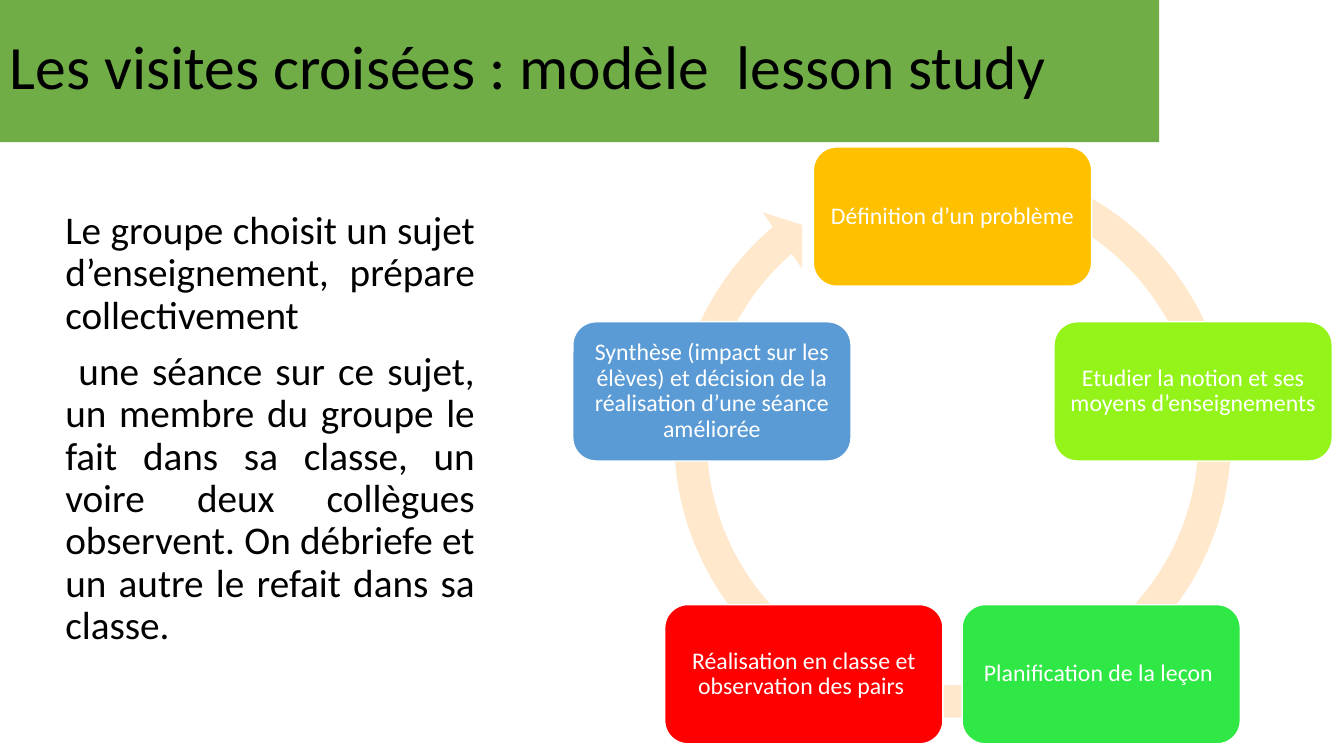
from math import cos, pi, sin

from pptx import Presentation
from pptx.dml.color import RGBColor
from pptx.enum.shapes import MSO_SHAPE
from pptx.enum.text import MSO_ANCHOR, PP_ALIGN
from pptx.util import Pt

TITLE = "Les visites croisées : modèle  lesson study"
BODY = [
    "Le groupe choisit un sujet d’enseignement, prépare collectivement",
    " une séance sur ce sujet, un membre du groupe le fait dans sa classe, "
    "un voire deux collègues observent. On débriefe et un autre le refait "
    "dans sa classe.",
]
STEPS = [
    ("Définition d’un problème", "FFC000"),
    ("Etudier la notion et ses moyens d’enseignements", "94F319"),
    ("Planification de la leçon ", "30E845"),
    ("Réalisation en classe et observation des pairs ", "FF0000"),
    ("Synthèse (impact sur les élèves) et décision de la réalisation "
     "d’une séance améliorée", "5B9BD5"),
]

CENTER_X, CENTER_Y, RADIUS = 680.4, 335.4, 180.7
STEP_W, STEP_H = 198.7, 99.4
ARROW_SIZE, ARROW_TOP = 423.4, 102.2
ARROW_ADJUST = [0.055, 3.307, 137.676, 173.91, 0.058]
STEP_FRAME = dict.fromkeys(
    ["margin_left", "margin_top", "margin_right", "margin_bottom"], Pt(5))


def color(value):
    return RGBColor.from_string(value)


def add_filled(kind, x, y, w, h, fill, line=None):
    sp = s.shapes.add_shape(kind, Pt(x), Pt(y), Pt(w), Pt(h))
    sp.shadow.inherit = False
    sp.fill.solid()
    sp.fill.fore_color.rgb = color(fill)
    if line:
        sp.line.color.rgb = color(line)
        sp.line.width = Pt(1)
    else:
        sp.line.fill.background()
    return sp


def write(sp, texts, size, font_color, frame, **paragraph):
    """Fill sp with one paragraph per text; frame and paragraph hold formats."""
    tf = sp.text_frame
    tf.word_wrap = True
    for name, value in frame.items():
        setattr(tf, name, value)
    for i, text in enumerate(texts):
        p = tf.add_paragraph() if i else tf.paragraphs[0]
        p.line_spacing = 0.9
        for name, value in paragraph.items():
            setattr(p, name, value)
        r = p.add_run()
        r.text = text
        r.font.name = "Calibri"
        r.font.size = Pt(size)
        r.font.color.rgb = color(font_color)


prs = Presentation()
prs.slide_width, prs.slide_height = Pt(960), Pt(540)
s = prs.slides.add_slide(prs.slide_layouts[6])

banner = add_filled(MSO_SHAPE.RECTANGLE, 0, -2.9, 828, 104.4, "70AD47")
write(banner, [TITLE], 44, "000000",
      {"vertical_anchor": MSO_ANCHOR.MIDDLE}, alignment=PP_ALIGN.LEFT)

body = s.shapes.add_textbox(Pt(39.6), Pt(146.9), Pt(306.7), Pt(342.7))
write(body, BODY, 28, "000000", {"vertical_anchor": MSO_ANCHOR.TOP},
      alignment=PP_ALIGN.JUSTIFY, space_before=Pt(10))

arrow = add_filled(MSO_SHAPE.CIRCULAR_ARROW, CENTER_X - ARROW_SIZE / 2,
                   ARROW_TOP, ARROW_SIZE, ARROW_SIZE, "FFE8CC")
for i, value in enumerate(ARROW_ADJUST):
    arrow.adjustments[i] = value

for i, (text, fill) in enumerate(STEPS):
    angle = 2 * pi * i / len(STEPS)
    x = CENTER_X + RADIUS * sin(angle) - STEP_W / 2
    y = CENTER_Y - RADIUS * cos(angle) - STEP_H / 2
    step = add_filled(MSO_SHAPE.ROUNDED_RECTANGLE, x, y, STEP_W, STEP_H,
                      fill, "FFFFFF")
    write(step, [text], 17, "FFFFFF",
          {"vertical_anchor": MSO_ANCHOR.MIDDLE, **STEP_FRAME},
          alignment=PP_ALIGN.CENTER)

prs.save("out.pptx")
